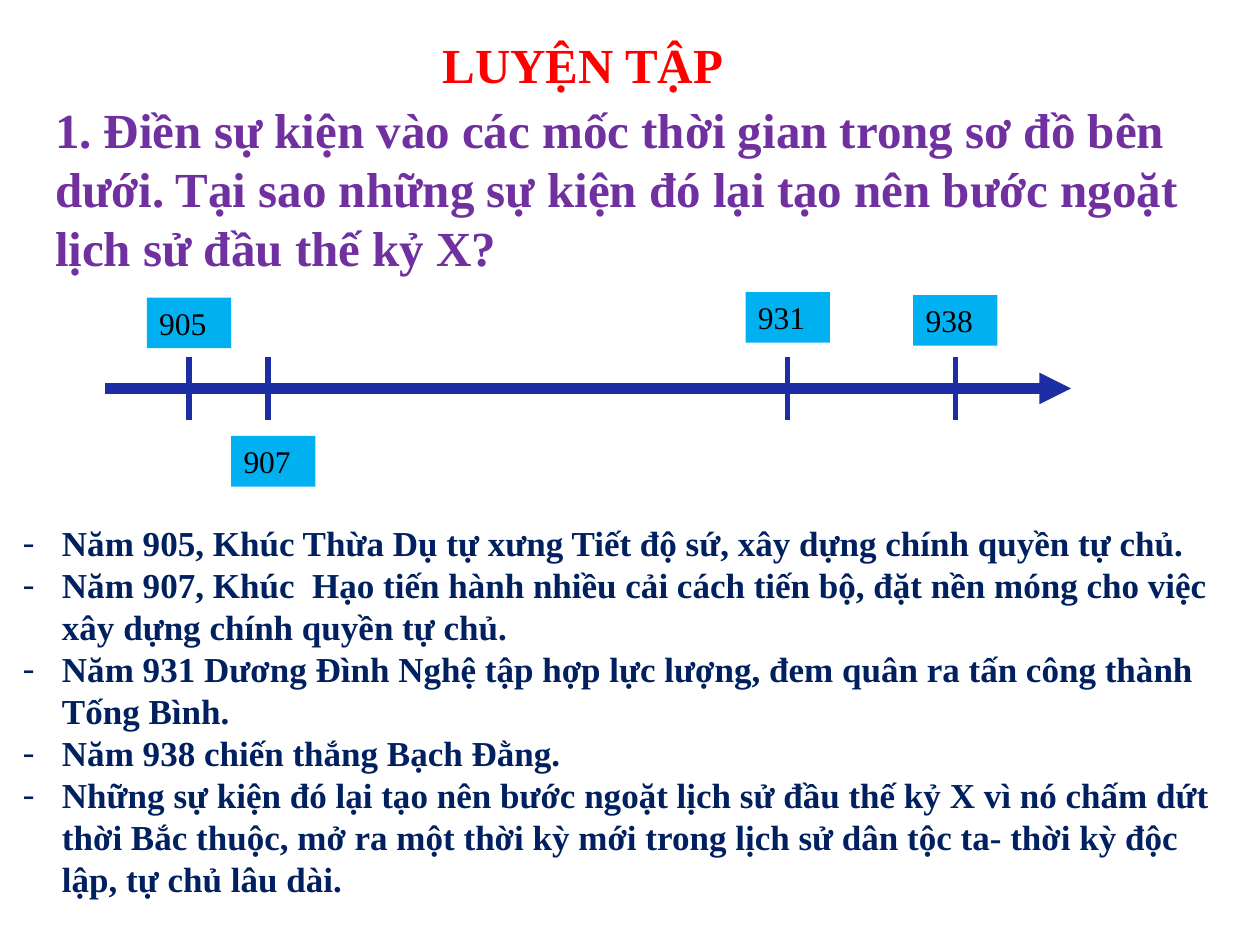
from dataclasses import dataclass

from lxml.etree import SubElement
from pptx import Presentation
from pptx.dml.color import RGBColor as RGB
from pptx.enum.shapes import MSO_CONNECTOR as CONNECTOR, MSO_SHAPE as SHAPE
from pptx.enum.text import MSO_ANCHOR as ANCHOR, MSO_AUTO_SIZE as AUTO, PP_ALIGN as ALIGN
from pptx.oxml.ns import qn
from pptx.util import Cm, Pt


@dataclass(frozen=True)
class Theme:
    """Font, colours and type sizes of the slide."""
    font: str = "Times New Roman"
    title: RGB = RGB(0xFF, 0x00, 0x00)
    question: RGB = RGB(0x70, 0x30, 0xA0)
    answer: RGB = RGB(0x00, 0x20, 0x60)
    axis: RGB = RGB(0x1D, 0x2D, 0xA3)
    label: RGB = RGB(0x00, 0xB0, 0xF0)
    label_text: RGB = RGB(0x00, 0x00, 0x00)
    heading_size: int = 28
    answer_size: int = 20
    label_size: int = 18


THEME = Theme()
AXIS_Y = 7.83
TICK_HALF = 0.64
LABEL_W, LABEL_H = 1.7, 1.02

QUESTION = ("1. Điền sự kiện vào các mốc thời gian trong sơ đồ bên dưới. "
            "Tại sao những sự kiện đó lại tạo nên bước ngoặt lịch sử đầu thế kỷ X?")
ANSWERS = [
    "Năm 905, Khúc Thừa Dụ tự xưng Tiết độ sứ, xây dựng chính quyền tự chủ.",
    "Năm 907, Khúc  Hạo tiến hành nhiều cải cách tiến bộ, đặt nền móng cho việc "
    "xây dựng chính quyền tự chủ.",
    "Năm 931 Dương Đình Nghệ tập hợp lực lượng, đem quân ra tấn công thành Tống Bình.",
    "Năm 938 chiến thắng Bạch Đằng.",
    "Những sự kiện đó lại tạo nên bước ngoặt lịch sử đầu thế kỷ X vì nó chấm dứt "
    "thời Bắc thuộc, mở ra một thời kỳ mới trong lịch sử dân tộc ta- thời kỳ độc lập, "
    "tự chủ lâu dài.",
]
MILESTONES = [
    ("905", 3.81, 2.96, 6.0),
    ("907", 5.4, 4.66, 8.79),
    ("931", 15.88, 15.03, 5.89),
    ("938", 19.26, 18.41, 5.95),
]


def add_run(p, text, size, color, bold=True):
    """Append a formatted run to a paragraph."""
    r = p.add_run()
    r.text = text
    r.font.name = THEME.font
    r.font.size = Pt(size)
    r.font.bold = bold
    r.font.color.rgb = color


def set_bullet(p, indent, char="-"):
    """Give a paragraph a hanging bullet."""
    pPr = p._p.get_or_add_pPr()
    pPr.set("marL", str(Cm(indent)))
    pPr.set("indent", str(-Cm(indent)))
    SubElement(pPr, qn("a:buFont"), typeface=THEME.font)
    SubElement(pPr, qn("a:buChar"), char=char)


def add_title(slide, text, left, top, width, height):
    """Place and fill the title placeholder."""
    sp = slide.shapes.title
    sp.left, sp.top, sp.width, sp.height = Cm(left), Cm(top), Cm(width), Cm(height)
    tf = sp.text_frame
    tf.auto_size = AUTO.NONE
    tf.vertical_anchor = ANCHOR.TOP
    p = tf.paragraphs[0]
    p.alignment = ALIGN.CENTER
    add_run(p, text, THEME.heading_size, THEME.title)


def add_text(slide, texts, left, top, width, height, size, color, indent=None):
    """Add a wrapped text box, bulleted when an indent is given."""
    sp = slide.shapes.add_textbox(Cm(left), Cm(top), Cm(width), Cm(height))
    tf = sp.text_frame
    tf.word_wrap = True
    for i, text in enumerate(texts):
        p = tf.add_paragraph() if i else tf.paragraphs[0]
        if indent:
            set_bullet(p, indent)
        add_run(p, text, size, color)


def add_line(slide, x1, y1, x2, y2, width, arrow=False):
    """Add a straight line, optionally ending in an arrowhead."""
    line = slide.shapes.add_connector(CONNECTOR.STRAIGHT, Cm(x1), Cm(y1), Cm(x2), Cm(y2))
    line.line.color.rgb = THEME.axis
    line.line.width = Pt(width)
    if arrow:
        SubElement(line.line._get_or_add_ln(), qn("a:tailEnd"), type="triangle")
    SubElement(line._element.spPr, qn("a:effectLst"))


def add_label(slide, year, left, top):
    """Add a filled year label."""
    sp = slide.shapes.add_shape(SHAPE.RECTANGLE, Cm(left), Cm(top), Cm(LABEL_W), Cm(LABEL_H))
    sp.shadow.inherit = False
    sp.fill.solid()
    sp.fill.fore_color.rgb = THEME.label
    sp.line.fill.background()
    tf = sp.text_frame
    tf.word_wrap = True
    tf.vertical_anchor = ANCHOR.TOP
    p = tf.paragraphs[0]
    p.alignment = ALIGN.LEFT
    add_run(p, year, THEME.label_size, THEME.label_text, bold=False)


def add_timeline(slide):
    """Draw the time axis with its ticks and year labels."""
    add_line(slide, 2.12, AXIS_Y, 21.59, AXIS_Y, 6, arrow=True)
    for year, tick_x, left, top in MILESTONES:
        add_line(slide, tick_x, AXIS_Y - TICK_HALF, tick_x, AXIS_Y + TICK_HALF, 3)
        add_label(slide, year, left, top)


def main():
    """Build and save the slide."""
    prs = Presentation()
    prs.slide_width, prs.slide_height = Cm(25.4), Cm(19.05)
    slide = prs.slides.add_slide(prs.slide_layouts[5])
    add_title(slide, "LUYỆN TẬP", 5.4, 0.56, 12.7, 1.45)
    add_text(slide, [QUESTION], 0.86, 1.88, 23.5, 3.84, THEME.heading_size, THEME.question)
    add_timeline(slide)
    add_text(slide, ANSWERS, 0.21, 10.39, 24.77, 7.95,
             THEME.answer_size, THEME.answer, indent=0.79)
    prs.save("out.pptx")


if __name__ == "__main__":
    main()
